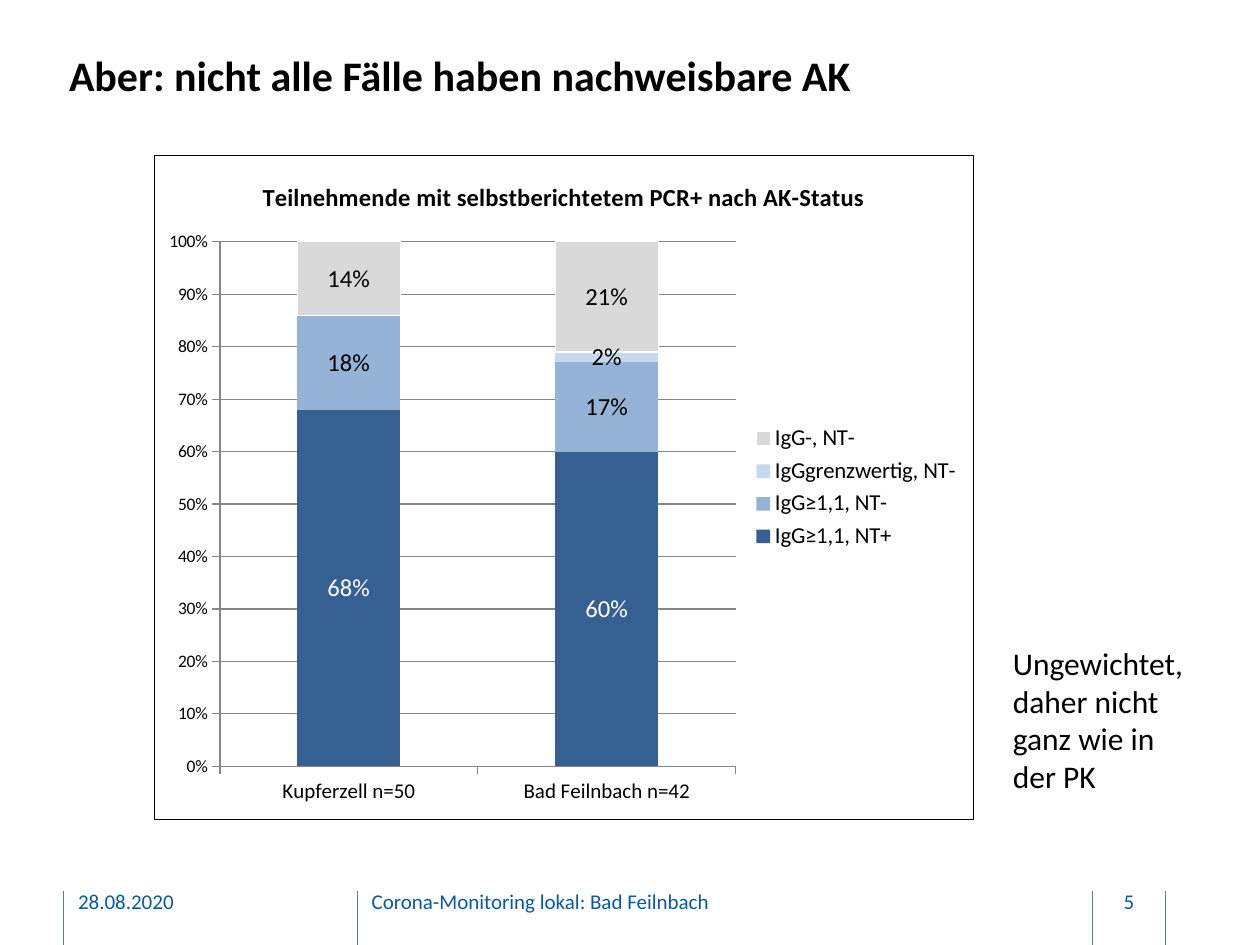
from lxml import etree
from pptx import Presentation
from pptx.chart.data import CategoryChartData
from pptx.dml.color import RGBColor
from pptx.enum.chart import XL_CHART_TYPE, XL_LABEL_POSITION, XL_LEGEND_POSITION, XL_TICK_MARK
from pptx.enum.shapes import MSO_CONNECTOR
from pptx.enum.text import MSO_ANCHOR, PP_ALIGN
from pptx.oxml import parse_xml
from pptx.oxml.ns import nsdecls, qn
from pptx.util import Inches, Pt

STACKED = XL_CHART_TYPE.COLUMN_STACKED_100
LABEL_CENTER = XL_LABEL_POSITION.CENTER
LEGEND_RIGHT = XL_LEGEND_POSITION.RIGHT
TICK_OUT = XL_TICK_MARK.OUTSIDE
TICK_NONE = XL_TICK_MARK.NONE
STRAIGHT = MSO_CONNECTOR.STRAIGHT
TOP, MIDDLE = MSO_ANCHOR.TOP, MSO_ANCHOR.MIDDLE
LEFT, CENTER = PP_ALIGN.LEFT, PP_ALIGN.CENTER

FONT = "Calibri"
BLACK, WHITE, GRID_GRAY = "000000", "FFFFFF", "868686"
FOOTER_BLUE, DIVIDER_BLUE = "045AA6", "4F81BD"

SITES = ["Kupferzell n=50", "Bad Feilnbach n=42"]
ANTIBODY_STATUS = [
    ("IgG≥1,1, NT+", (0.68, 0.6), "376092", WHITE),
    ("IgG≥1,1, NT-", (0.18, 0.17), "95B3D7", BLACK),
    ("IgGgrenzwertig, NT-", (None, 0.02), "C6D9F1", BLACK),
    ("IgG-, NT-", (0.14, 0.21), "D9D9D9", BLACK),
]
PLOT_LAYOUT = {"x": 0.08, "y": 0.13, "w": 0.63, "h": 0.79}


def rgb(hex_color):
    """Turn a hex string into a colour."""
    return RGBColor.from_string(hex_color)


def format_font(font, size, color=BLACK, bold=False):
    """Apply the deck's typeface with the given size, colour and weight."""
    values = {"name": FONT, "size": Pt(size), "bold": bold}
    for attribute, value in values.items():
        setattr(font, attribute, value)
    font.color.rgb = rgb(color)


def format_line(line, color, width):
    """Give a line its colour and width."""
    line.color.rgb = rgb(color)
    line.width = Pt(width)


def add_text(slide, box, text, size, color=BLACK, bold=False,
             align=LEFT, anchor=TOP, side_inset=0.1):
    """Place one wrapped paragraph in a box."""
    frame = slide.shapes.add_textbox(*map(Inches, box)).text_frame
    values = {"word_wrap": True, "vertical_anchor": anchor,
              "margin_left": Inches(side_inset), "margin_right": Inches(side_inset)}
    for attribute, value in values.items():
        setattr(frame, attribute, value)
    paragraph = frame.paragraphs[0]
    paragraph.alignment = align
    run = paragraph.add_run()
    run.text = text
    format_font(run.font, size, color, bold)


def add_divider(slide, x, top, bottom):
    """Draw one thin vertical footer line."""
    divider = slide.shapes.add_connector(
        STRAIGHT, Inches(x), Inches(top), Inches(x), Inches(bottom))
    format_line(divider.line, DIVIDER_BLUE, 0.5)
    etree.SubElement(divider._element.spPr, qn("a:effectLst"))


def add_footer(slide, box):
    """Fill the footer band with date, topic, page number and dividers."""
    left, top, width, height = box
    for offset in (0, 2.34, 8.17, width):
        add_divider(slide, left + offset, top + 0.12, top + height)
    entries = [
        (0.12, 2.03, "28.08.2020", LEFT),
        (2.45, 3.17, "Corona-Monitoring lokal: Bad Feilnbach", LEFT),
        (8.19, 0.54, "5", CENTER),
    ]
    for offset, entry_width, text, align in entries:
        add_text(slide, (left + offset, top, entry_width, 0.4), text, 12,
                 FOOTER_BLUE, align=align, anchor=MIDDLE, side_inset=0)


def frame_chart(chart):
    """Outline the chart area and fix the inner plot position."""
    outline = parse_xml(
        f'<c:spPr {nsdecls("c", "a")}><a:solidFill><a:srgbClr val="{WHITE}"/></a:solidFill>'
        f'<a:ln w="{Pt(0.75)}"><a:solidFill><a:srgbClr val="{BLACK}"/></a:solidFill></a:ln></c:spPr>')
    chart_element = chart._chartSpace.find(qn("c:chart"))
    chart_element.addnext(outline)
    plot_area = chart_element.find(qn("c:plotArea"))
    for automatic in plot_area.findall(qn("c:layout")):
        plot_area.remove(automatic)
    settings = {"layoutTarget": "inner", "xMode": "edge", "yMode": "edge", **PLOT_LAYOUT}
    parts = "".join(f'<c:{tag} val="{value}"/>' for tag, value in settings.items())
    plot_area.insert(0, parse_xml(
        f'<c:layout {nsdecls("c")}><c:manualLayout>{parts}</c:manualLayout></c:layout>'))


def format_axes(chart):
    """Style the site axis and the percentage axis."""
    for axis, size in ((chart.category_axis, 12), (chart.value_axis, 10)):
        values = {"major_tick_mark": TICK_OUT, "minor_tick_mark": TICK_NONE}
        for attribute, value in values.items():
            setattr(axis, attribute, value)
        format_font(axis.tick_labels.font, size)
        format_line(axis.format.line, GRID_GRAY, 0.75)
    percent_axis = chart.value_axis
    percent_axis.major_unit = 0.1
    percent_axis.has_major_gridlines = True
    format_line(percent_axis.major_gridlines.format.line, GRID_GRAY, 0.75)
    percent_axis.tick_labels.number_format = "0%"
    percent_axis.tick_labels.number_format_is_linked = False


def format_series(plot):
    """Colour and label each antibody status."""
    for series, (_, _, color, label_color) in zip(plot.series, ANTIBODY_STATUS):
        series.format.fill.solid()
        series.format.fill.fore_color.rgb = rgb(color)
        labels = series.data_labels
        values = {"show_value": True, "number_format": "0%",
                  "number_format_is_linked": False, "position": LABEL_CENTER}
        for attribute, value in values.items():
            setattr(labels, attribute, value)
        format_font(labels.font, 14, label_color)
    format_line(plot.series[-1].format.line, WHITE, 0.75)


def add_antibody_chart(slide, box):
    """Place the stacked chart of antibody status by site."""
    data = CategoryChartData(number_format="0%")
    data.categories = SITES
    for name, shares, _, _ in ANTIBODY_STATUS:
        data.add_series(name, shares)
    chart = slide.shapes.add_chart(STACKED, *map(Inches, box), data).chart
    format_font(chart.font, 10)
    chart.has_title = True
    title = chart.chart_title.text_frame
    title.text = "Teilnehmende mit selbstberichtetem PCR+ nach AK-Status"
    format_font(title.paragraphs[0].runs[0].font, 14, bold=True)
    chart.has_legend = True
    chart.legend.position = LEGEND_RIGHT
    chart.legend.include_in_layout = False
    format_font(chart.legend.font, 13)
    plot = chart.plots[0]
    for attribute, value in {"gap_width": 150, "overlap": 100, "vary_by_categories": False}.items():
        setattr(plot, attribute, value)
    format_axes(chart)
    format_series(plot)
    frame_chart(chart)


def main():
    """Build and save the slide."""
    deck = Presentation()
    deck.slide_width, deck.slide_height = Inches(10), Inches(7.5)
    slide = deck.slides.add_slide(deck.slide_layouts[6])
    add_footer(slide, (0.5, 6.95, 8.75, 0.55))
    add_antibody_chart(slide, (1.22, 1.23, 6.51, 5.28))
    add_text(slide, (7.94, 5.06, 1.59, 1.31),
             "Ungewichtet, daher nicht ganz wie in der PK", 18)
    add_text(slide, (0.45, 0.34, 6.76, 0.5),
             "Aber: nicht alle Fälle haben nachweisbare AK", 24, bold=True)
    deck.save("out.pptx")


if __name__ == "__main__":
    main()
